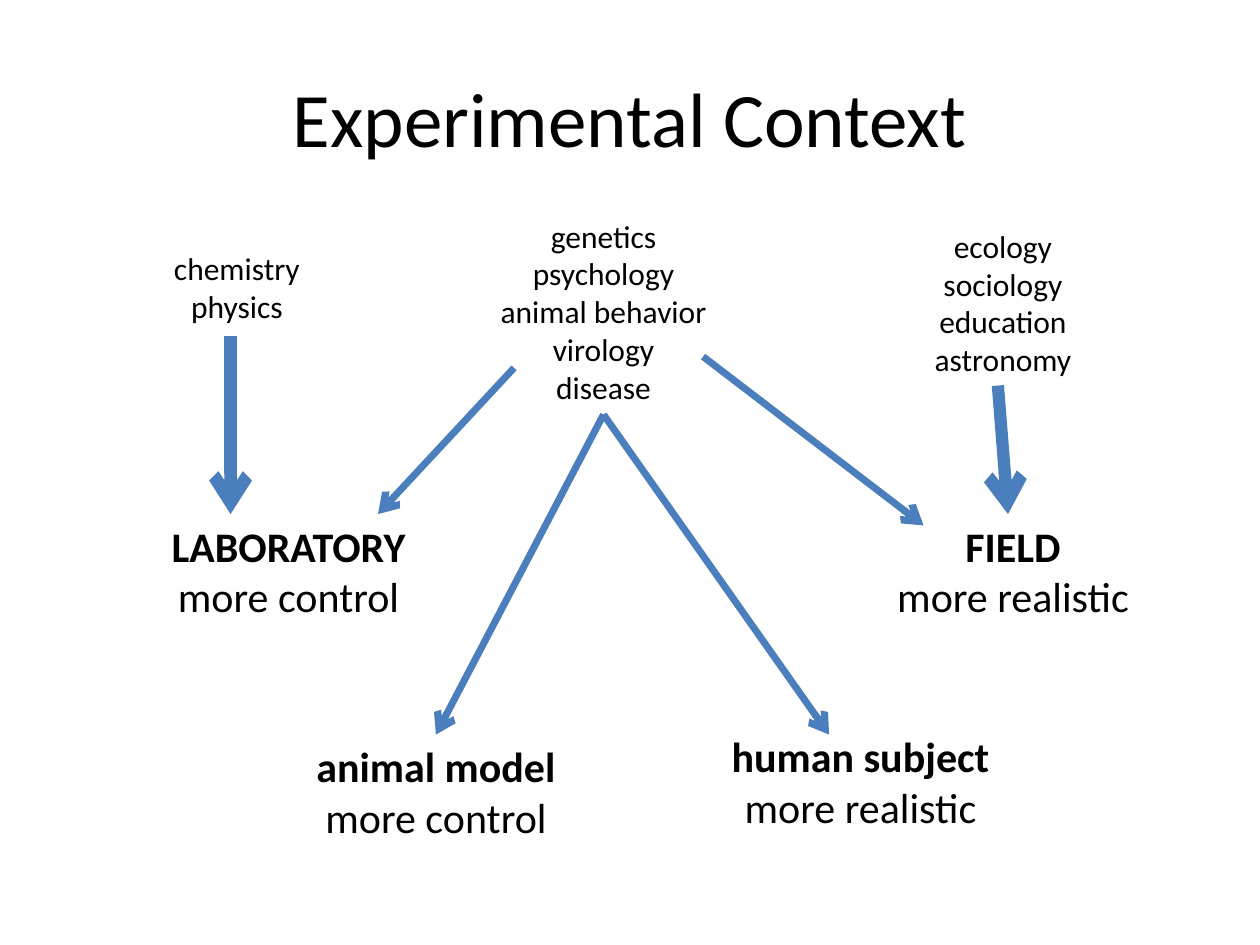
"""Build the Experimental Context slide, linking disciplines to research settings."""
import pptx
import pptx.dml.color
import pptx.enum.shapes
import pptx.enum.text
import pptx.oxml.ns
import pptx.util
from lxml import etree

Inches = pptx.util.Inches
Pt = pptx.util.Pt
BLACK = pptx.dml.color.RGBColor(0x00, 0x00, 0x00)
BLUE = pptx.dml.color.RGBColor(0x4B, 0x7E, 0xBC)
FONT = "Calibri"
THIN, THICK = 4, 7

DISCIPLINES = {
    "laboratory sciences": (0.67, 1.93, 2.42, 1.01, ["chemistry", "physics"]),
    "mixed sciences": (3.58, 1.67, 2.42, 1.62,
                       ["genetics", "psychology", "animal behavior", "virology", "disease"]),
    "field sciences": (6.75, 1.75, 2.42, 1.31,
                       ["ecology", "sociology", "education", "astronomy"]),
}
SETTINGS = {
    "laboratory": (1.08, 4.08, 2.42, 0.91, ["LABORATORY", "more control"]),
    "field": (7, 4.08, 2.08, 0.91, ["FIELD", "more realistic"]),
    "human subject": (5.58, 5.75, 2.5, 0.91, ["human subject", "more realistic"]),
    "animal model": (2.25, 5.83, 2.42, 0.91, ["animal model", "more control"]),
}
LOOSE_ARROWS = [
    ((7.92, 3.06), (8, 4.08), THICK),
    ((1.83, 2.67), (1.83, 4.08), THICK),
    ((5.58, 2.83), (7.33, 4.17), THIN),
    ((4.08, 2.92), (3, 4.08), THIN),
]


def format_paragraph(paragraph, size, bold=False):
    """Centre a paragraph and set its font."""
    paragraph.alignment = pptx.enum.text.PP_ALIGN.CENTER
    paragraph.font.name = FONT
    paragraph.font.size = Pt(size)
    paragraph.font.bold = bold
    paragraph.font.color.rgb = BLACK


def set_title(slide, text):
    """Fill and place the title placeholder."""
    title = slide.shapes.title
    title.left, title.top = Inches(0.5), Inches(0.3)
    title.width, title.height = Inches(9), Inches(1.25)
    title.text_frame.text = text
    title.text_frame.vertical_anchor = pptx.enum.text.MSO_ANCHOR.MIDDLE
    format_paragraph(title.text_frame.paragraphs[0], 44)


def add_label(slide, box, size, bold_heading=False):
    """Add a centred text box with one paragraph for each line."""
    *position, lines = box
    label = slide.shapes.add_textbox(*map(Inches, position))
    frame = label.text_frame
    frame.word_wrap = True
    frame.text = "\n".join(lines)
    for index, paragraph in enumerate(frame.paragraphs):
        format_paragraph(paragraph, size, bold_heading and index == 0)
    return label


def add_arrow(slide, start, end, width):
    """Add a straight blue arrow without a shadow."""
    arrow = slide.shapes.add_connector(
        pptx.enum.shapes.MSO_CONNECTOR.STRAIGHT, *map(Inches, (*start, *end)))
    arrow.line.color.rgb = BLUE
    arrow.line.width = Pt(width)
    qualified = pptx.oxml.ns.qn
    etree.SubElement(arrow.line._get_or_add_ln(), qualified("a:tailEnd"), type="arrow")
    etree.SubElement(arrow._element.spPr, qualified("a:effectLst"))
    return arrow


def main():
    """Build and save the presentation."""
    presentation = pptx.Presentation()
    presentation.slide_width, presentation.slide_height = Inches(10), Inches(7.5)
    slide = presentation.slides.add_slide(presentation.slide_layouts[5])
    set_title(slide, "Experimental Context")
    disciplines = {name: add_label(slide, box, 18) for name, box in DISCIPLINES.items()}
    settings = {name: add_label(slide, box, 24, True) for name, box in SETTINGS.items()}
    for start, end, width in LOOSE_ARROWS:
        add_arrow(slide, start, end, width)
    animal_arrow = add_arrow(slide, (4.79, 3.25), (3.46, 5.83), THIN)
    animal_arrow.end_connect(settings["animal model"], 0)
    human_arrow = add_arrow(slide, (4.79, 3.29), (6.58, 5.83), THIN)
    for arrow in (animal_arrow, human_arrow):
        arrow.begin_connect(disciplines["mixed sciences"], 2)
    presentation.save("out.pptx")


if __name__ == "__main__":
    main()
